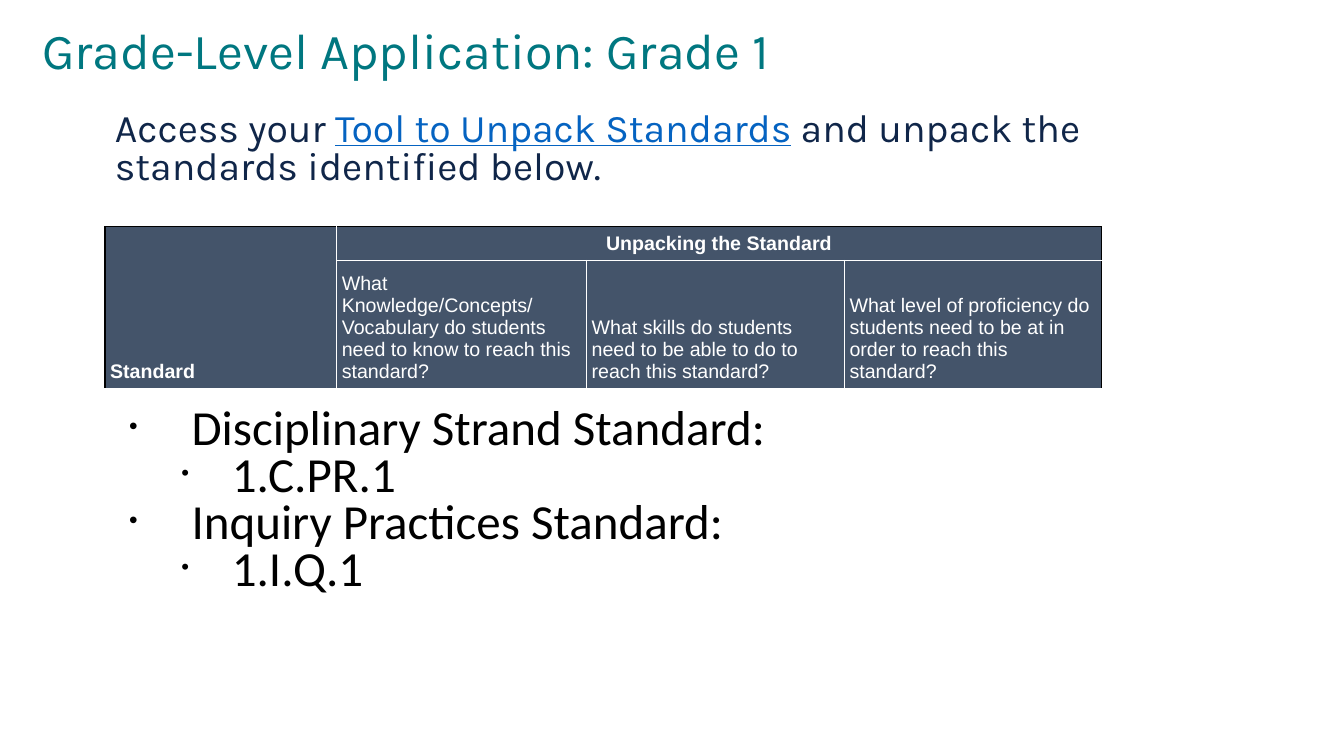
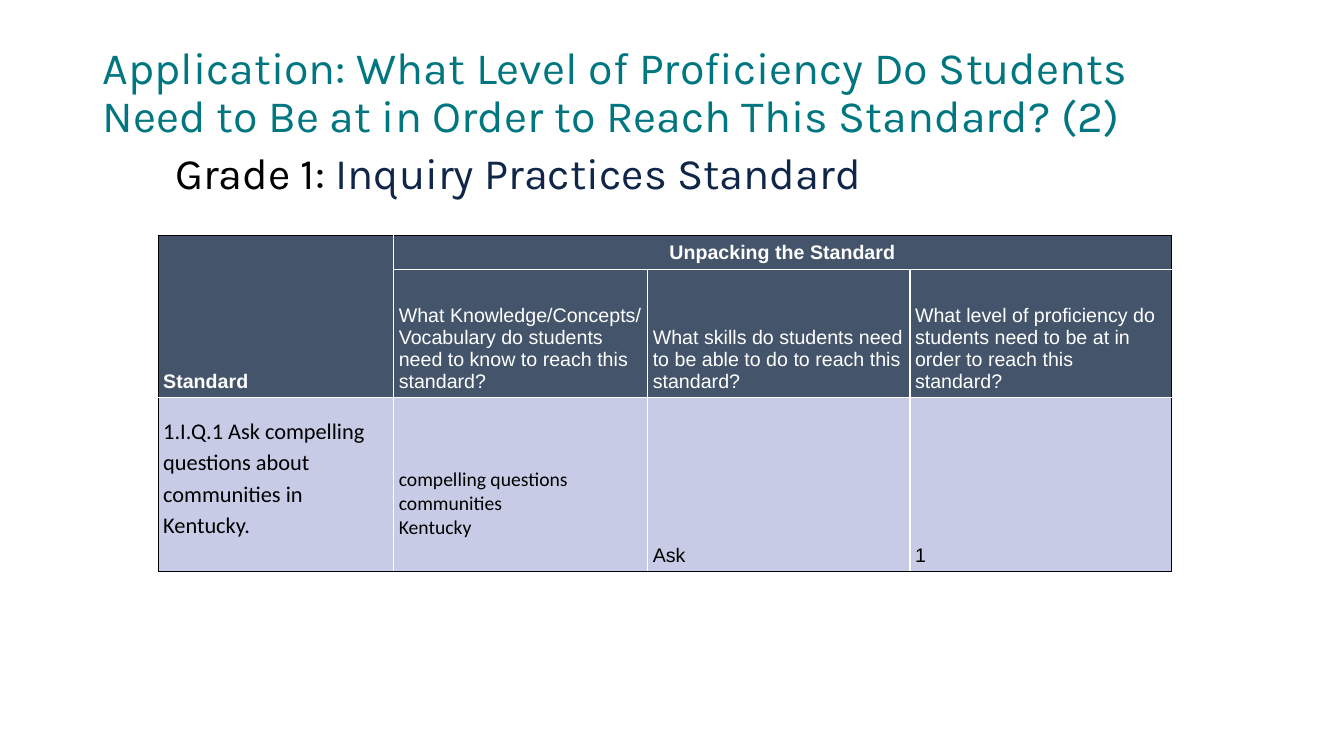
from dataclasses import dataclass

from lxml import etree
from pptx import Presentation
from pptx.dml.color import RGBColor
from pptx.enum import text
from pptx.oxml.ns import qn
from pptx.util import Pt


@dataclass(frozen=True)
class Theme:
    teal: str = "007780"
    navy: str = "102649"
    link: str = "0563C1"
    black: str = "000000"
    white: str = "FFFFFF"
    header: str = "44546A"
    body_cell: str = "C8CBE6"
    display: str = "Karla"
    body: str = "Calibri"
    grid: str = "Arial"
    title_size: int = 36
    long_title_size: int = 32
    subtitle_size: int = 31
    prompt_size: int = 28
    bullet_size: int = 35
    cell_size: int = 14
    standard_size: int = 16


theme = Theme()


def style_paragraph(paragraph, font_name, size, color, bold=False):
    for run in paragraph.runs:
        run.font.name = font_name
        run.font.size = Pt(size)
        run.font.bold = bold
        run.font.color.rgb = RGBColor.from_string(color)


def style_cell(cell, fill, edges):
    properties = cell._tc.get_or_add_tcPr()
    for side, color in zip("LRTB", edges):
        line = etree.SubElement(properties, qn(f"a:ln{side}"), w=str(Pt(1)))
        solid = etree.SubElement(line, qn("a:solidFill"))
        etree.SubElement(solid, qn("a:srgbClr"), val=color)
    cell.fill.solid()
    cell.fill.fore_color.rgb = RGBColor.from_string(fill)
    cell.margin_left = cell.margin_right = Pt(3.6)
    cell.margin_top = cell.margin_bottom = Pt(3.6)
    cell.vertical_anchor = text.MSO_ANCHOR.BOTTOM


header_rows = [
    ["Standard", "Unpacking the Standard", "", ""],
    [
        "",
        "What Knowledge/Concepts/ Vocabulary do students need to know to reach this standard?",
        "What skills do students need to be able to do to reach this standard?",
        "What level of proficiency do students need to be at in order to reach this standard?",
    ],
]
answer_row = [
    "1.I.Q.1 Ask compelling questions about communities in Kentucky.",
    "compelling questions\ncommunities\nKentucky",
    "Ask",
    "1",
]
column_weights = [2.3, 2.48, 2.56, 2.55]

slides = [
    {
        "title": "Grade-Level Application: Grade 1",
        "title_size": theme.title_size,
        "title_box": (23, 15, 677, 104),
        "intro": [
            ("Access your ", theme.navy),
            ("Tool to Unpack Standards", theme.link),
            (" and unpack the standards identified below.", theme.navy),
        ],
        "intro_size": theme.prompt_size,
        "intro_spacing": 0.8,
        "intro_box": (75, 77, 723.6, 65),
        "table_at": (75, 162),
        "table_width": 711.8,
        "row_heights": [23.3, 85],
        "rows": header_rows,
        "bullets": [
            (0, "Disciplinary Strand Standard:"),
            (1, "1.C.PR.1"),
            (0, "Inquiry Practices Standard:"),
            (1, "1.I.Q.1"),
        ],
    },
    {
        "title": "Application: What Level of Proficiency Do Students Need to Be at in Order to Reach This Standard? (2)",
        "title_size": theme.long_title_size,
        "title_box": (66, 29, 828, 104),
        "intro": [("Grade 1: ", theme.black), ("Inquiry Practices Standard", theme.navy)],
        "intro_size": theme.subtitle_size,
        "intro_spacing": 0.9,
        "intro_box": (118, 105, 723.6, 45),
        "table_at": (113, 168.5),
        "table_width": 723.6,
        "row_heights": [23.7, 91.5, 124.5],
        "rows": header_rows + [answer_row],
        "bullets": [],
    },
]
bullet_levels = [(54.7, -44.6, 50), (83.5, -36, 45)]

presentation = Presentation()
presentation.slide_width = Pt(960)
presentation.slide_height = Pt(540)

for content in slides:
    slide = presentation.slides.add_slide(presentation.slide_layouts[5])

    title = slide.shapes.title
    title.left, title.top, title.width, title.height = map(Pt, content["title_box"])
    title.text_frame.text = content["title"]
    title.text_frame.auto_size = text.MSO_AUTO_SIZE.NONE
    title.text_frame.vertical_anchor = text.MSO_ANCHOR.TOP
    paragraph = title.text_frame.paragraphs[0]
    paragraph.alignment = text.PP_ALIGN.LEFT
    paragraph.line_spacing = 0.9
    style_paragraph(paragraph, theme.display, content["title_size"], theme.teal)

    intro = slide.shapes.add_textbox(*map(Pt, content["intro_box"]))
    intro.text_frame.word_wrap = True
    paragraph = intro.text_frame.paragraphs[0]
    paragraph.line_spacing = content["intro_spacing"]
    for wording, color in content["intro"]:
        run = paragraph.add_run()
        run.text = wording
    style_paragraph(paragraph, theme.display, content["intro_size"], theme.navy)
    for run, (wording, color) in zip(paragraph.runs, content["intro"]):
        run.font.color.rgb = RGBColor.from_string(color)
        run.font.underline = color == theme.link

    rows = content["rows"]
    heights = content["row_heights"]
    table = slide.shapes.add_table(
        len(rows), len(column_weights), *map(Pt, content["table_at"]),
        Pt(content["table_width"]), Pt(sum(heights)),
    ).table
    table.first_row = table.horz_banding = False
    for column, weight in zip(table.columns, column_weights):
        column.width = Pt(content["table_width"] * weight / sum(column_weights))
    for row, height in zip(table.rows, heights):
        row.height = Pt(height)
    table.cell(0, 0).merge(table.cell(1, 0))
    table.cell(0, 1).merge(table.cell(0, 3))

    for row_index, row in enumerate(rows):
        is_answer = row_index == 2
        for column_index, wording in enumerate(row):
            cell = table.cell(row_index, column_index)
            last_column = column_index + (cell.span_width if cell.is_merge_origin else 1) == len(row)
            outer = [column_index == 0, last_column, row_index == 0, is_answer]
            edges = [theme.black if edge else theme.white for edge in outer]
            style_cell(cell, theme.body_cell if is_answer else theme.header, edges)
            if not wording:
                continue
            cell.text_frame.text = wording
            is_standard = is_answer and column_index == 0
            uses_body_font = is_answer and column_index < 2
            if uses_body_font:
                cell.margin_bottom = Pt(23)
            for paragraph in cell.text_frame.paragraphs:
                if is_standard:
                    paragraph.line_spacing = 1.15
                style_paragraph(
                    paragraph,
                    theme.body if uses_body_font else theme.grid,
                    theme.standard_size if is_standard else theme.cell_size,
                    theme.black if is_answer else theme.white,
                    bold=cell.is_merge_origin,
                )
    heading = table.cell(0, 1)
    heading.vertical_anchor = text.MSO_ANCHOR.MIDDLE
    heading.text_frame.paragraphs[0].alignment = text.PP_ALIGN.CENTER

    if content["bullets"]:
        standards = slide.shapes.add_textbox(Pt(75), Pt(288), Pt(723.6), Pt(150))
        standards.text_frame.word_wrap = True
        standards.text_frame.text = "\n".join(wording for level, wording in content["bullets"])
        for paragraph, (level, wording) in zip(standards.text_frame.paragraphs, content["bullets"]):
            margin, indent, bullet_percent = bullet_levels[level]
            paragraph.level = level
            paragraph.line_spacing = 0.8
            properties = paragraph._p.get_or_add_pPr()
            properties.set("marL", str(Pt(margin)))
            properties.set("indent", str(Pt(indent)))
            bullet_color = etree.SubElement(properties, qn("a:buClr"))
            etree.SubElement(bullet_color, qn("a:srgbClr"), val=theme.black)
            etree.SubElement(properties, qn("a:buSzPct"), val=str(bullet_percent * 1000))
            etree.SubElement(properties, qn("a:buFont"), typeface=theme.grid)
            etree.SubElement(properties, qn("a:buChar"), char="•")
            style_paragraph(paragraph, theme.body, theme.bullet_size, theme.black)

presentation.save("out.pptx")
